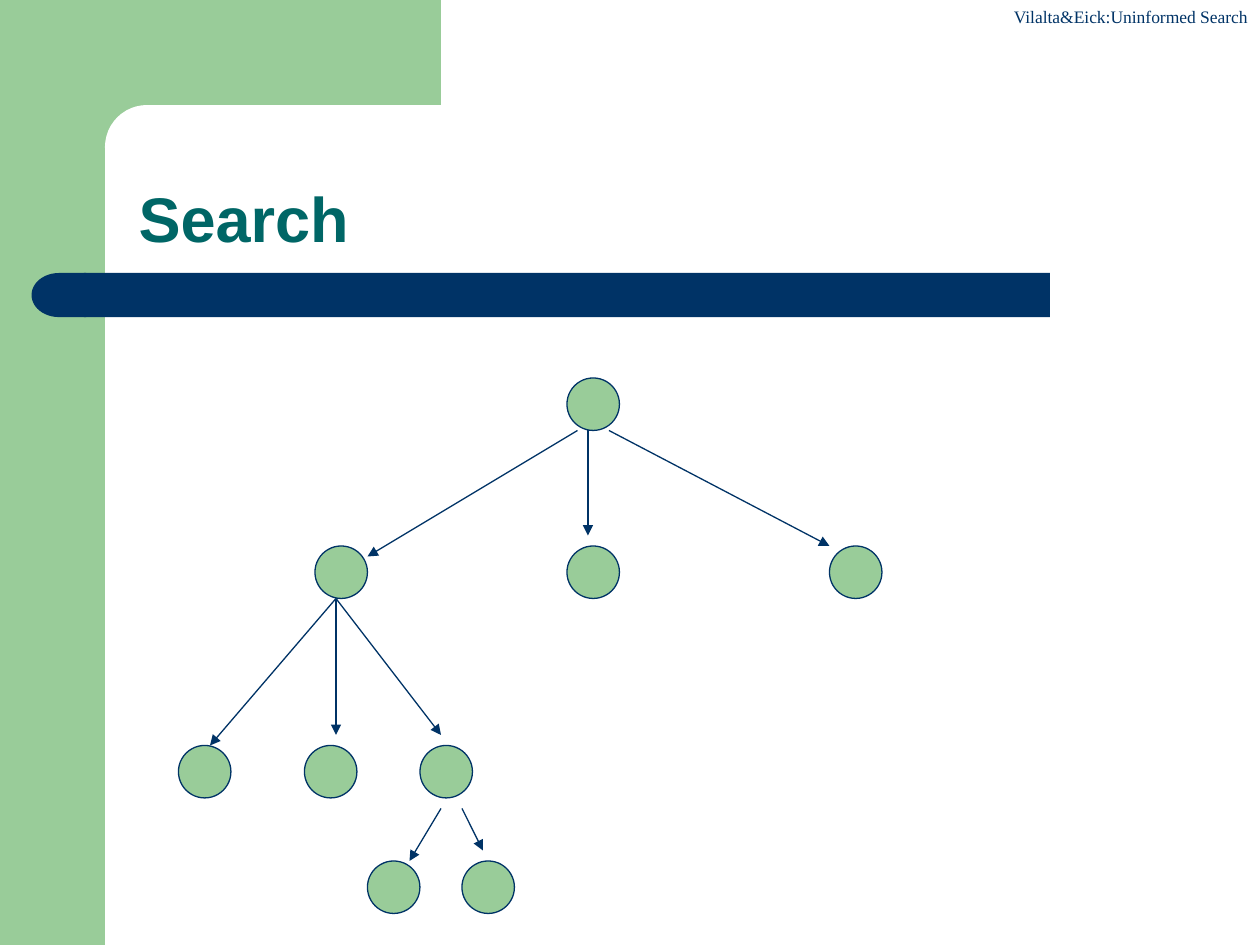
from lxml import etree
from pptx import Presentation
from pptx import util as u
from pptx.dml.color import RGBColor
from pptx.enum import shapes, text
from pptx.oxml.ns import qn

COLORS = {"leaf": "99CC99", "navy": "003366", "teal": "006666", "paper": "FFFFFF"}
COLUMNS, ROWS = 120, 90
NODE_SIZE = 5

NODES = {
    36: [54],
    52: [30, 54, 79],
    71: [17, 29, 40],
    82: [35, 44],
}
BRANCHES = [
    ((55, 41), (35, 53)),
    ((56, 41), (56, 51)),
    ((58, 41), (79, 52)),
    ((32, 57), (20, 71)),
    ((32, 57), (32, 70)),
    ((32, 57), (42, 70)),
    ((42, 77), (39, 82)),
    ((44, 77), (46, 81)),
]


def rgb(name):
    return RGBColor.from_string(COLORS[name])


def write(frame, words, font, size, color, bold=False, wrap=True,
          align=text.PP_ALIGN.LEFT, anchor=text.MSO_ANCHOR.TOP, spacing=1.0):
    frame.word_wrap = wrap
    frame.vertical_anchor = anchor
    line = frame.paragraphs[0]
    line.alignment = align
    line.line_spacing = spacing
    run = line.add_run()
    run.text = words
    run.font.name = font
    run.font.size = u.Pt(size)
    run.font.bold = bold
    run.font.color.rgb = rgb(color)


class SlideBuilder:
    def __init__(self, deck):
        self.column = deck.slide_width / COLUMNS
        self.row = deck.slide_height / ROWS
        self.outline = u.Pt(0.75)
        self.slide = deck.slides.add_slide(deck.slide_layouts[5])

    def place(self, *cells):
        units = (self.column, self.row) * 2
        return [round(cell * unit) for cell, unit in zip(cells, units)]

    def block(self, kind, cells, fill, line=None, corner=None, turn=0):
        block = self.slide.shapes.add_shape(kind, *self.place(*cells))
        block.shadow.inherit = False
        block.rotation = turn
        block.fill.solid()
        block.fill.fore_color.rgb = rgb(fill)
        if corner is not None:
            block.adjustments[0] = corner
        if line:
            block.line.color.rgb = rgb(line)
            block.line.width = self.outline
        else:
            block.line.fill.background()

    def node(self, column, row):
        self.block(shapes.MSO_SHAPE.OVAL, (column, row, NODE_SIZE, NODE_SIZE),
                   "leaf", line="navy")

    def branch(self, start, end):
        branch = self.slide.shapes.add_connector(
            shapes.MSO_CONNECTOR.STRAIGHT, *self.place(*start, *end))
        branch.line.color.rgb = rgb("navy")
        branch.line.width = self.outline
        etree.SubElement(branch.line._get_or_add_ln(), qn("a:tailEnd"), type="triangle")
        etree.SubElement(branch._element.spPr, qn("a:effectLst"))

    def label(self, cells, words, **style):
        label = self.slide.shapes.add_textbox(*self.place(*cells))
        write(label.text_frame, words, **style)

    def title(self, cells, words, **style):
        title = self.slide.shapes.title
        title.left, title.top, title.width, title.height = self.place(*cells)
        write(title.text_frame, words, **style)
        self.slide.shapes._spTree.append(title._element)


def main():
    deck = Presentation()
    deck.slide_width, deck.slide_height = u.Inches(10), u.Inches(7.5)
    page = SlideBuilder(deck)
    preset = shapes.MSO_SHAPE

    page.block(preset.RECTANGLE, (0, 0, 10, ROWS), "leaf")
    page.block(preset.RECTANGLE, (9, 0, 33, 14), "leaf")
    page.block(preset.ROUNDED_RECTANGLE, (10, 10, 67, 8), "paper", corner=0.5)
    page.block(preset.ROUNDED_RECTANGLE, (8, 26, 92, 4.2), "navy", corner=0)
    page.block(preset.FLOWCHART_DELAY, (3, 26, 5.2, 4.2), "navy", turn=180)

    page.label((95, 0, 25, 3.2), "Vilalta&Eick:Uninformed Search", font="Times New Roman",
               size=10, color="navy", wrap=False, align=text.PP_ALIGN.RIGHT)
    page.title((12, 10, 105, 15), "Search", font="Arial", size=36, color="teal",
               bold=True, anchor=text.MSO_ANCHOR.BOTTOM, spacing=0.9)

    for row, columns in NODES.items():
        for column in columns:
            page.node(column, row)
    for start, end in BRANCHES:
        page.branch(start, end)

    deck.save("out.pptx")


if __name__ == "__main__":
    main()
